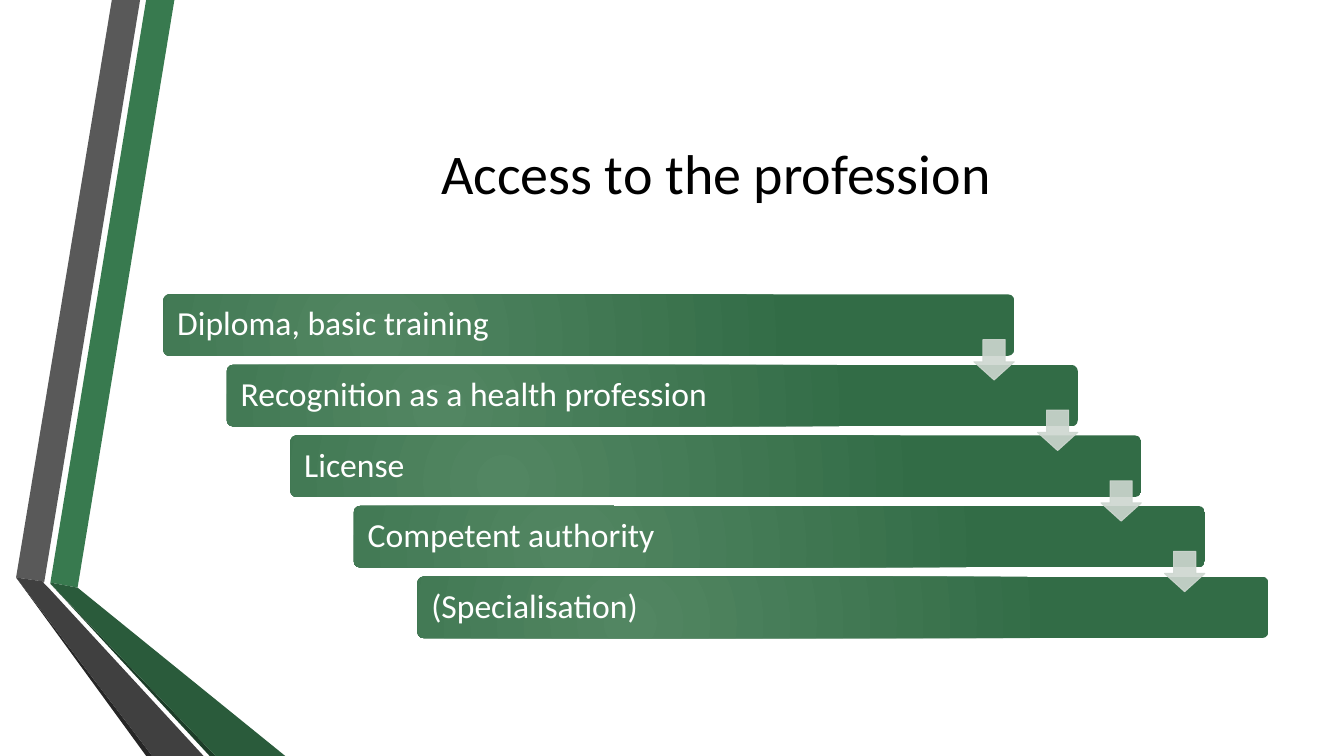
from pptx import Presentation
from pptx.dml.color import RGBColor
from pptx.enum.shapes import MSO_SHAPE
from pptx.enum.text import MSO_ANCHOR, MSO_AUTO_SIZE, PP_ALIGN
from pptx.oxml import parse_xml
from pptx.oxml.ns import nsdecls, qn
from pptx.util import Pt

PX = 9144  # one hundred px to the inch


class Theme:
    font = "Calibri"
    head = 40
    body = 24
    ink = "000000"
    white = "FFFFFF"
    glow = "528662"
    green = "326C46"
    arrow = "CED7D0"


STEPS = [
    "Diploma, basic training",
    "Recognition as a health profession",
    "License",
    "Competent authority",
    "(Specialisation)",
]

# Fill and corners of each band of the side ribbon
BANDS = [
    ("387A4F", [(50, 578), (77, 583), (173, 0), (145, 0)]),
    ("595959", [(139, 0), (111, 0), (16, 573), (44, 577)]),
    ("262626", [(16, 573), (145, 750), (151, 750)]),
    ("1C3D28", [(50, 579), (208, 750), (214, 750)]),
    ("2A5B3B", [(50, 579), (214, 750), (283, 750), (77, 583), (50, 578)]),
    ("404040", [(202, 750), (48, 583), (43, 578), (44, 577), (16, 573), (151, 750)]),
]


def rgb(code):
    return RGBColor.from_string(code)


def place(shape, box):
    shape.left, shape.top, shape.width, shape.height = [n * PX for n in box]


def write(frame, text, size, color, align):
    frame.word_wrap = True
    frame.auto_size = MSO_AUTO_SIZE.NONE
    frame.vertical_anchor = MSO_ANCHOR.MIDDLE
    para = frame.paragraphs[0]
    para.alignment = align
    run = para.add_run()
    run.text = text
    run.font.name = Theme.font
    run.font.size = Pt(size)
    run.font.color.rgb = rgb(color)
    return para


def ribbon(slide, left, top):
    group = slide.shapes.add_group_shape()
    for color, points in BANDS:
        pen = group.shapes.build_freeform(*points[0], scale=PX)
        pen.add_line_segments(points[1:], close=True)
        band = pen.convert_to_shape(left * PX, top * PX)
        band.shadow.inherit = False
        band.fill.solid()
        band.fill.fore_color.rgb = rgb(color)
        band.line.fill.background()


def title(slide, box, text):
    head = slide.shapes.title
    place(head, box)
    write(head.text_frame, text, Theme.head, Theme.ink, PP_ALIGN.CENTER)


def preset(slide, kind, box, *adjust):
    shape = slide.shapes.add_shape(kind, *[n * PX for n in box])
    shape.shadow.inherit = False
    for i, value in enumerate(adjust):
        shape.adjustments[i] = value
    return shape


def shade(shape):
    """Fill with a round gradient that glows from the lower middle."""
    shape.fill.gradient()
    for stop, color in zip(shape.fill.gradient_stops, (Theme.glow, Theme.green)):
        stop.color.rgb = rgb(color)
    grad = shape._element.spPr.find(qn("a:gradFill"))
    grad.remove(grad.find(qn("a:lin")))
    grad.append(parse_xml(
        f'<a:path {nsdecls("a")} path="circle">'
        '<a:fillToRect l="50000" t="100000" r="100000" b="50000"/></a:path>'))


def bar(slide, box, text):
    shape = preset(slide, MSO_SHAPE.ROUNDED_RECTANGLE, box, 0.1)
    shade(shape)
    shape.line.fill.background()
    frame = shape.text_frame
    frame.margin_left = 12 * PX
    frame.margin_right = frame.margin_top = frame.margin_bottom = 10 * PX
    para = write(frame, text, Theme.body, Theme.white, PP_ALIGN.LEFT)
    para.line_spacing = 0.9


def arrow(slide, box):
    shape = preset(slide, MSO_SHAPE.DOWN_ARROW, box, 0.55, 0.45)
    shape.fill.solid()
    shape.line.fill.solid()
    shape.line.width = Pt(0.75)
    for color in (shape.fill.fore_color, shape.line.color):
        color.rgb = rgb(Theme.arrow)
    for tone in shape._element.spPr.iter(qn("a:srgbClr")):
        tone.append(parse_xml(f'<a:alpha {nsdecls("a")} val="90000"/>'))


def stairs(slide, box, steps):
    left, top, width, height = box
    wide, tall, side = 844, 61, 40
    gaps = len(steps) - 1
    dx, dy = (width - wide) // gaps, (height - tall) // gaps
    spots = [(left + i * dx, top + i * dy) for i in range(len(steps))]
    for (x, y), text in zip(spots, steps):
        bar(slide, (x, y, wide, tall), text)
    for x, y in spots[:-1]:
        arrow(slide, (x + wide - side, y + 45, side, side))


def main():
    deck = Presentation()
    deck.slide_width, deck.slide_height = 1333 * PX, 750 * PX
    slide = deck.slides.add_slide(deck.slide_layouts[5])
    ribbon(slide, 0, 0)
    title(slide, (162, 75, 1096, 192), "Access to the profession")
    stairs(slide, (162, 292, 1096, 341), STEPS)
    deck.save("out.pptx")


if __name__ == "__main__":
    main()
